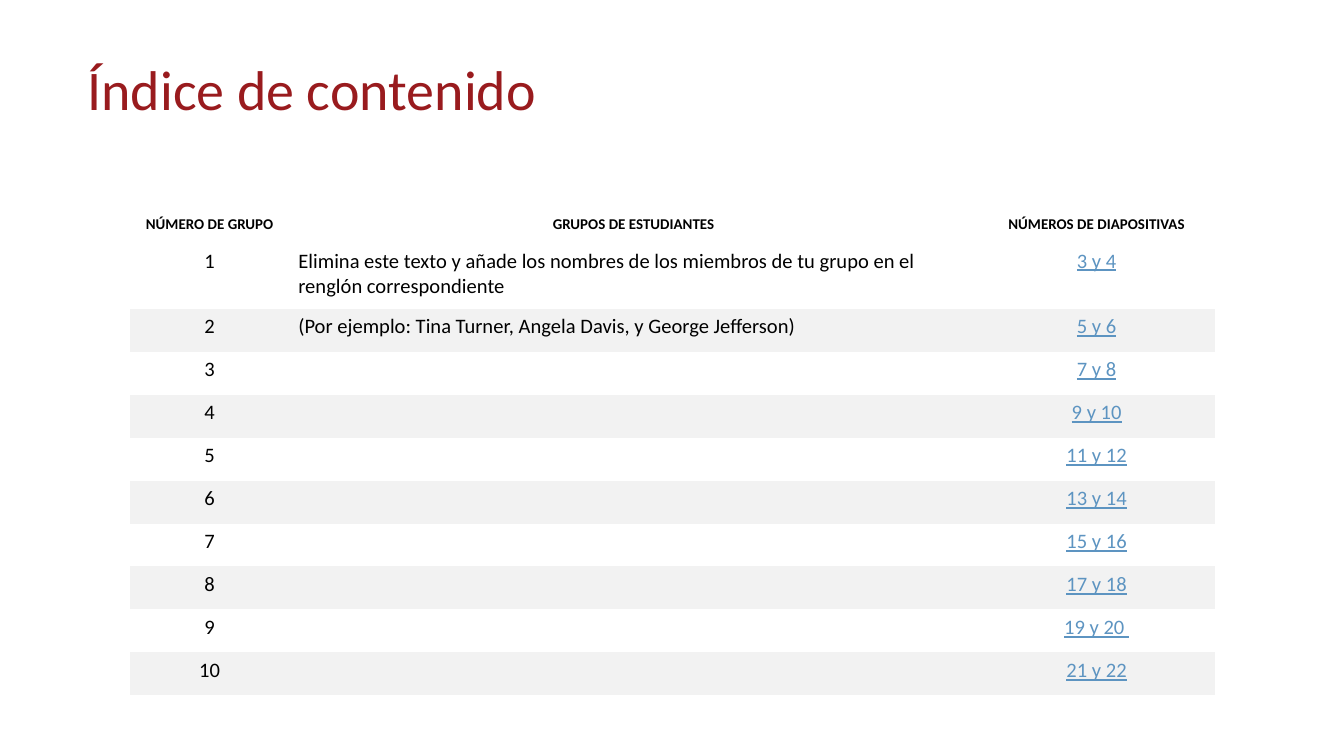
from pptx import Presentation
from pptx.dml.color import RGBColor
from pptx.enum.shapes import MSO_SHAPE
from pptx.enum.text import MSO_ANCHOR, MSO_AUTO_SIZE, PP_ALIGN
from pptx.oxml.ns import qn
from pptx.util import Inches, Pt

RECTANGLE = MSO_SHAPE.RECTANGLE
TOP, MIDDLE, BOTTOM = MSO_ANCHOR.TOP, MSO_ANCHOR.MIDDLE, MSO_ANCHOR.BOTTOM
LEFT, CENTER = PP_ALIGN.LEFT, PP_ALIGN.CENTER
NO_AUTOFIT = MSO_AUTO_SIZE.NONE

SLIDE_WIDTH = 10
SLIDE_HEIGHT = SLIDE_WIDTH * 9 / 16
FONT = "Calibri"
RED, BLACK, BLUE = "991B1E", "000000", "5D94C1"
WHITE, GRAY = "FFFFFF", "F2F2F2"
PLAIN_STYLE = "{2D5ABB26-0587-4C30-8999-92F81FD0307C}"

HEADINGS = ["NÚMERO DE GRUPO", "GRUPOS DE ESTUDIANTES", "NÚMEROS DE DIAPOSITIVAS"]
STUDENTS = {
    1: "Elimina este texto y añade los nombres de los miembros de tu grupo en el "
       "renglón correspondiente",
    2: "(Por ejemplo: Tina Turner, Angela Davis, y George Jefferson)",
}
SLIDE_NUMBERS = ["3 y 4", "5 y 6", "7 y 8", "9 y 10", "11 y 12", "13 y 14",
                 "15 y 16", "17 y 18", "19 y 20 ", "21 y 22"]
COLUMN_WIDTHS = [1.18, 5.13, 1.76]
HEADER_HEIGHT, ROW_HEIGHT = 0.45, 0.32


def rgb(color):
    """Turn a hex string into a colour."""
    return RGBColor.from_string(color)


def format_paragraph(paragraph, size, color, align, bold=False, underline=False):
    """Set the alignment and font of a paragraph."""
    paragraph.alignment = align
    font = paragraph.font
    font.name, font.size, font.bold = FONT, Pt(size), bold
    font.underline = underline
    font.color.rgb = rgb(color)


def set_insets(target, left, top, right, bottom):
    """Set the inner margins of a cell or text frame in inches."""
    target.margin_left, target.margin_top = Inches(left), Inches(top)
    target.margin_right, target.margin_bottom = Inches(right), Inches(bottom)


def add_backdrop(slide, width, height):
    """Cover the slide with a white panel behind everything else."""
    backdrop = slide.shapes.add_shape(RECTANGLE, 0, 0, width, height)
    backdrop.shadow.inherit = False
    backdrop.fill.solid()
    backdrop.fill.fore_color.rgb = rgb(WHITE)
    backdrop.line.fill.background()
    slide.shapes._spTree.insert(2, backdrop._element)


def place_title(slide, left, top, width, height):
    """Move and format the slide title."""
    title = slide.shapes.title
    title.left, title.top = Inches(left), Inches(top)
    title.width, title.height = Inches(width), Inches(height)
    frame = title.text_frame
    frame.text = "Índice de contenido"
    frame.word_wrap = True
    frame.auto_size = NO_AUTOFIT
    frame.vertical_anchor = MIDDLE
    set_insets(frame, 0.07, 0.04, 0.07, 0.04)
    heading = frame.paragraphs[0]
    heading.line_spacing = 0.9
    format_paragraph(heading, 30, RED, LEFT)


def fill_cell(cell, text, color, size, align, anchor, top_inset, fill, **style):
    """Write and format one table cell."""
    cell.text = text
    cell.vertical_anchor = anchor
    set_insets(cell, 0.07, top_inset, 0.07, 0.07)
    paragraph = cell.text_frame.paragraphs[0]
    format_paragraph(paragraph, size, color, align, **style)
    if not text:
        paragraph._p.get_or_add_endParaRPr().set("sz", str(size * 100))
    if fill:
        cell.fill.solid()
        cell.fill.fore_color.rgb = rgb(fill)
    else:
        cell.fill.background()


def add_index_table(slide, left, top):
    """Add the table of groups, students and slide numbers."""
    heights = [HEADER_HEIGHT] + [ROW_HEIGHT] * len(SLIDE_NUMBERS)
    table = slide.shapes.add_table(
        len(heights), len(COLUMN_WIDTHS), Inches(left), Inches(top),
        Inches(sum(COLUMN_WIDTHS)), Inches(sum(heights))).table
    table.first_row = table.horz_banding = False
    table._tbl.tblPr.find(qn("a:tableStyleId")).text = PLAIN_STYLE
    for column, width in zip(table.columns, COLUMN_WIDTHS):
        column.width = Inches(width)
    for row, height in zip(table.rows, heights):
        row.height = Inches(height)

    for index, heading in enumerate(HEADINGS):
        fill_cell(table.cell(0, index), heading, BLACK, 8, CENTER, BOTTOM, 0.07,
                  None, bold=True)
    for group, slide_numbers in enumerate(SLIDE_NUMBERS, start=1):
        fill = None if group % 2 else GRAY
        entries = [(str(group), BLACK, CENTER, False),
                   (STUDENTS.get(group, ""), BLACK, LEFT, False),
                   (slide_numbers, BLUE, CENTER, True)]
        for index, (text, color, align, underline) in enumerate(entries):
            fill_cell(table.cell(group, index), text, color, 11, align, TOP, 0.04,
                      fill, underline=underline)


def main():
    """Build and save the slide."""
    presentation = Presentation()
    presentation.slide_width = Inches(SLIDE_WIDTH)
    presentation.slide_height = Inches(SLIDE_HEIGHT)
    slide = presentation.slides.add_slide(presentation.slide_layouts[5])
    add_backdrop(slide, presentation.slide_width, presentation.slide_height)
    place_title(slide, 0.58, 0.21, 5.79, 0.95)
    add_index_table(slide, 0.97, 1.36)
    presentation.save("out.pptx")


if __name__ == "__main__":
    main()
